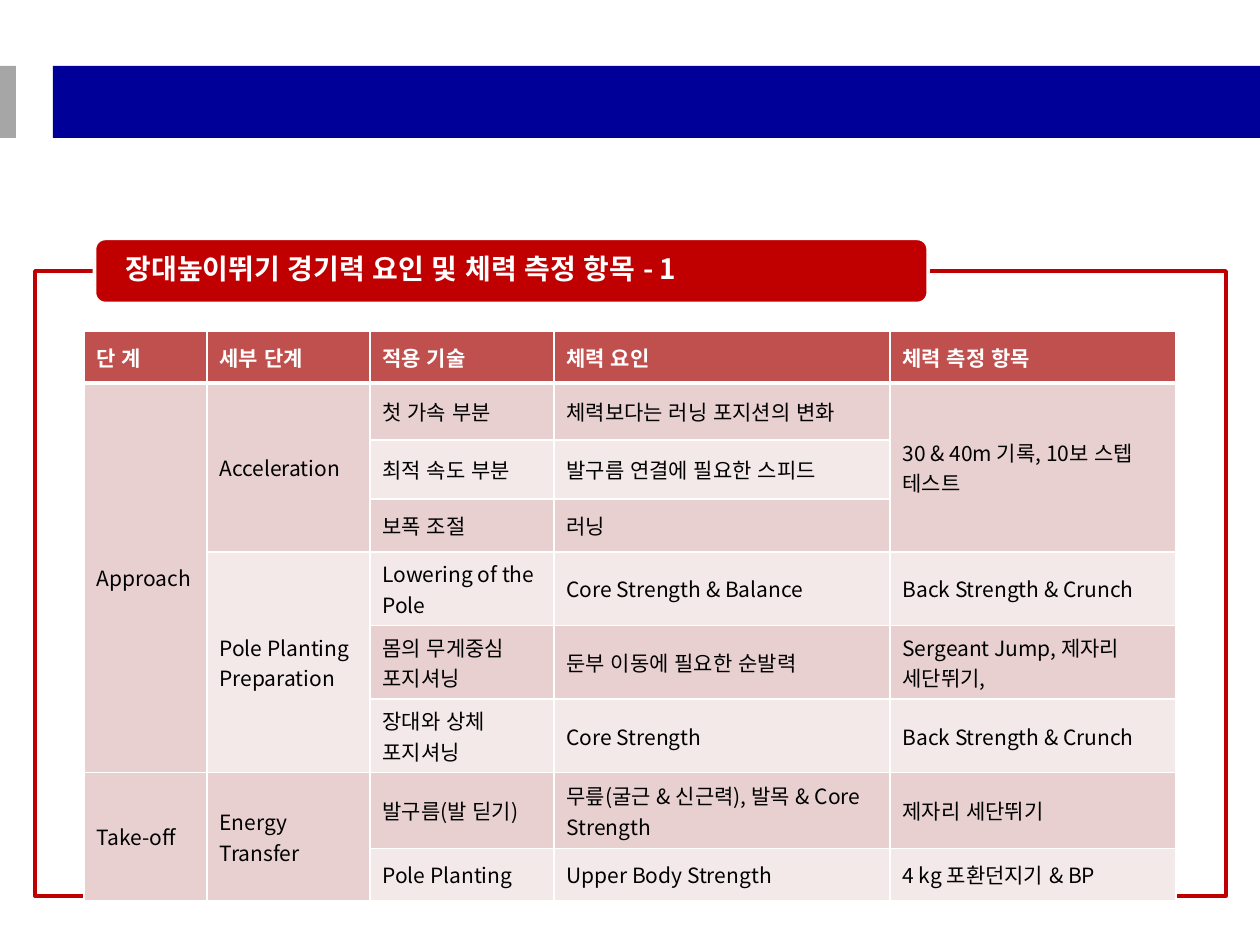
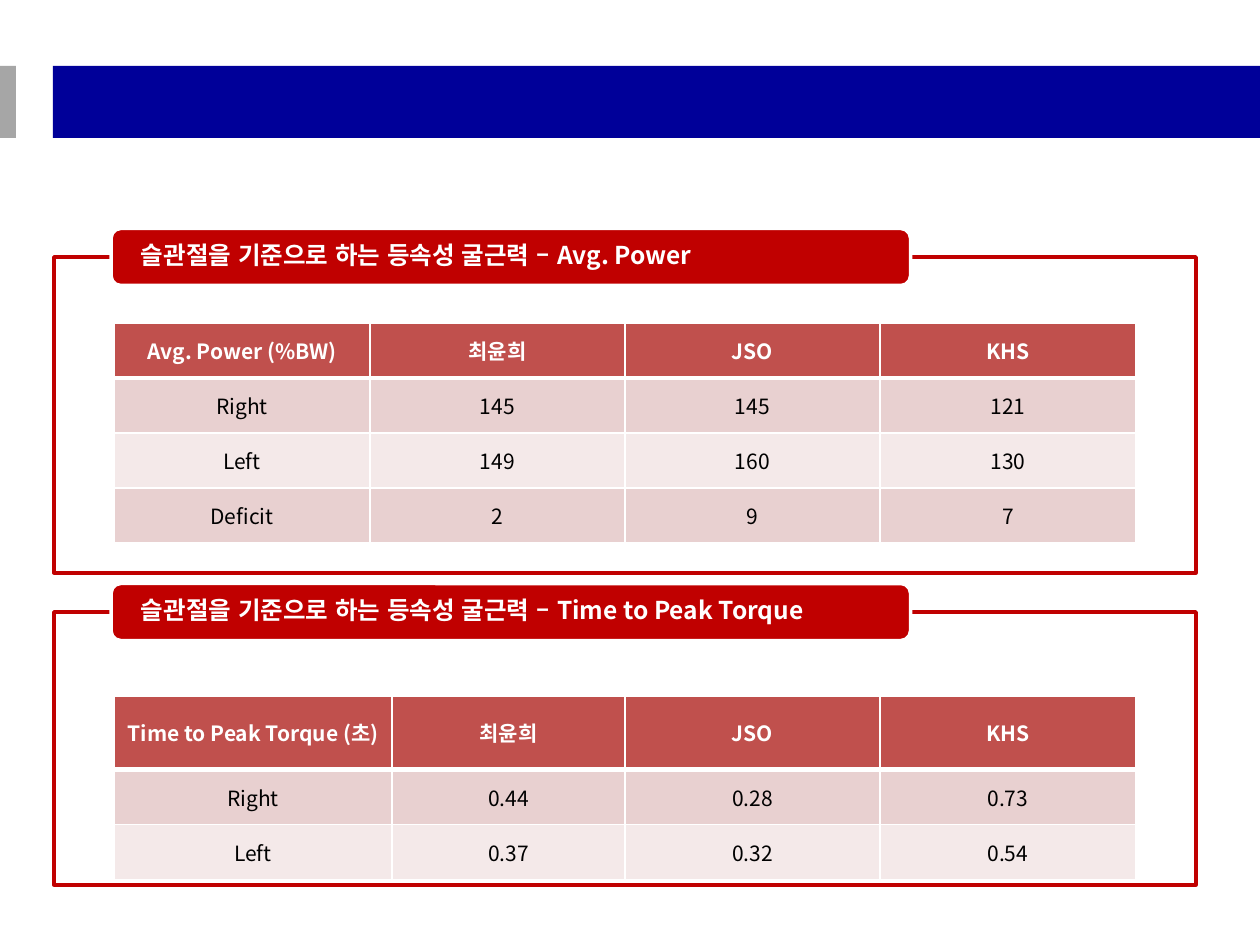
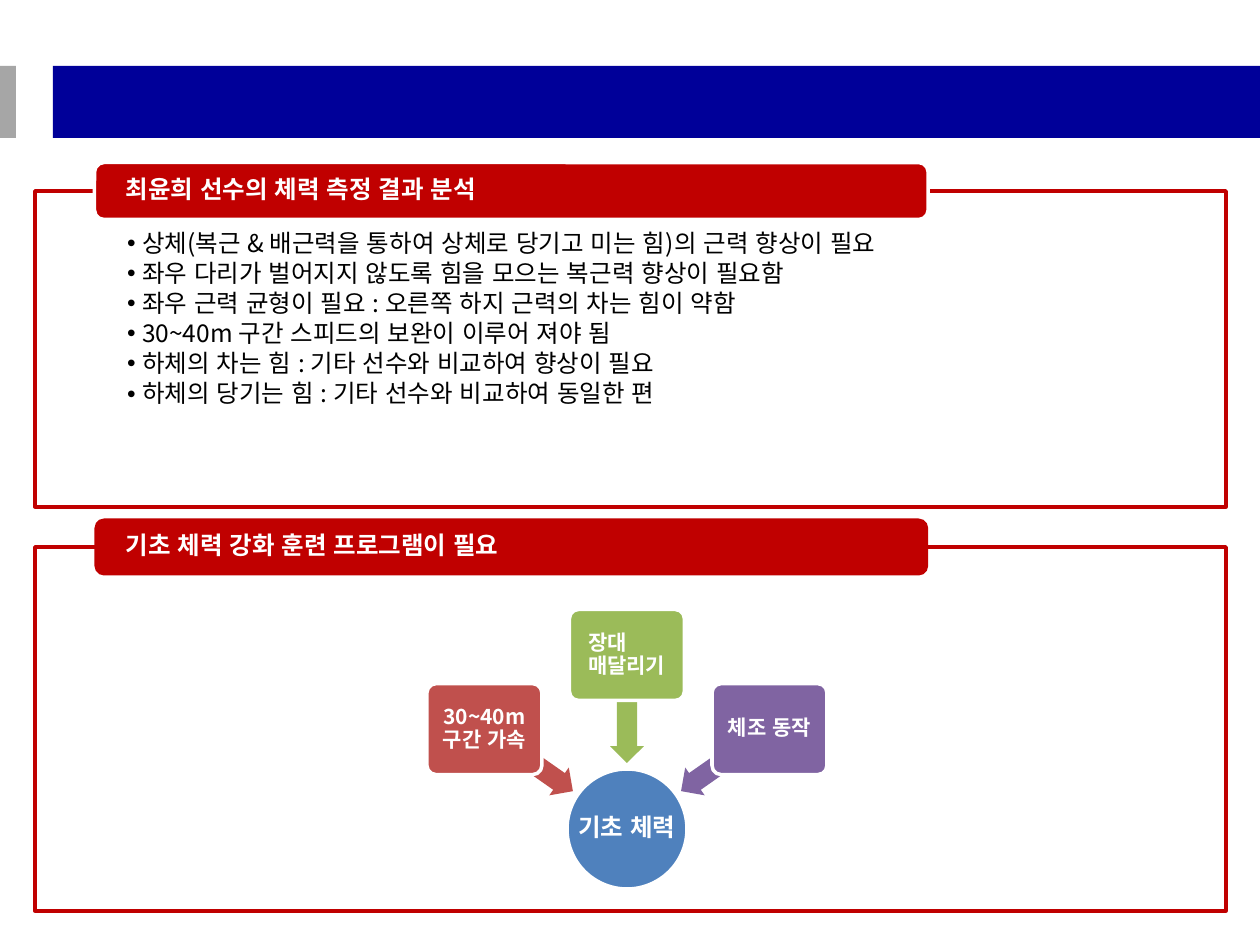
import math

from lxml import etree
from pptx import Presentation, util as u
from pptx.dml.color import RGBColor
from pptx.enum import lang, shapes, text
from pptx.oxml import ns

NAVY = RGBColor(0x00, 0x00, 0x99)
GREY = RGBColor(0xA6, 0xA6, 0xA6)
CRIMSON = RGBColor(0xC0, 0x00, 0x00)
WHITE = RGBColor(0xFF, 0xFF, 0xFF)
BLACK = RGBColor(0x00, 0x00, 0x00)
BRICK = RGBColor(0xC0, 0x50, 0x4D)
ROSE = RGBColor(0xE8, 0xD0, 0xD0)
PALE_ROSE = RGBColor(0xF4, 0xE9, 0xE9)
GREEN = RGBColor(0x9B, 0xBB, 0x59)
PURPLE = RGBColor(0x80, 0x64, 0xA2)
BLUE = RGBColor(0x4F, 0x81, 0xBD)

FONT = "Noto Sans CJK KR"
LEFT, CENTER = text.PP_ALIGN.LEFT, text.PP_ALIGN.CENTER
LINE_SPACING = 0.9
PX = 914400 / 126
SLIDE_W, SLIDE_H = 1260, 945
BANDS = [((53, 66, 1207, 72), NAVY), ((0, 66, 16, 72), GREY)]

# None continues the cell above
FACTORS = [
    ("단 계", "세부 단계", "적용 기술", "체력 요인", "체력 측정 항목"),
    ("Approach", "Acceleration", "첫 가속 부분", "체력보다는 러닝 포지션의 변화",
     "30 & 40m 기록, 10보 스텝 테스트"),
    (None, None, "최적 속도 부분", "발구름 연결에 필요한 스피드", None),
    (None, None, "보폭 조절", "러닝", None),
    (None, "Pole Planting Preparation", "Lowering of the Pole",
     "Core Strength & Balance", "Back Strength & Crunch"),
    (None, None, "몸의 무게중심 포지셔닝", "둔부 이동에 필요한 순발력",
     "Sergeant Jump, 제자리 세단뛰기,"),
    (None, None, "장대와 상체 포지셔닝", "Core Strength", "Back Strength & Crunch"),
    ("Take-off", "Energy Transfer", "발구름(발 딛기)",
     "무릎(굴근 & 신근력), 발목 & Core Strength", "제자리 세단뛰기"),
    (None, None, "Pole Planting", "Upper Body Strength", "4 kg 포환던지기 & BP"),
]
FACTOR_COLS = [123, 163, 184, 336, 286]
FACTOR_ROWS = [52, 57, 59, 53, 67, 69, 59, 76, 52]

POWER = [
    ("Avg. Power (%BW)", "최윤희", "JSO", "KHS"),
    ("Right", "145", "145", "121"),
    ("Left", "149", "160", "130"),
    ("Deficit", "2", "9", "7"),
]
TORQUE = [
    ("Time to Peak Torque (초)", "최윤희", "JSO", "KHS"),
    ("Right", "0.44", "0.28", "0.73"),
    ("Left", "0.37", "0.32", "0.54"),
]
POWER_COLS = [256, 255, 255, 256]
TORQUE_COLS = [278, 233, 255, 256]
RESULT_ROW = 55

FINDINGS = [
    "상체(복근 & 배근력을 통하여 상체로 당기고 미는 힘)의 근력 향상이 필요",
    "좌우 다리가 벌어지지 않도록 힘을 모으는 복근력 향상이 필요함",
    "좌우 근력 균형이 필요 : 오른쪽 하지 근력의 차는 힘이 약함",
    "30~40m 구간 스피드의 보완이 이루어 져야 됨",
    "하체의 차는 힘 : 기타 선수와 비교하여 향상이 필요",
    "하체의 당기는 힘 : 기타 선수와 비교하여 동일한 편",
]
# (lines, colour, direction from the hub in degrees, alignment, left inset)
EXERCISES = [
    (["30~40m 구간 가속"], BRICK, 215, CENTER, 4),
    (["장대", "매달리기"], GREEN, 270, LEFT, 16),
    (["체조 동작"], PURPLE, 325, CENTER, 4),
]
HUB = (627, 829)
HUB_SIZE, NODE_SIZE, ARROW_SIZE = (120, 120), (115, 91), (108, 34)
NODE_RADIUS, ARROW_RADIUS = 174, 120


def px(n):
    return u.Emu(round(n * PX))


def add_shape(slide, kind, box, fill, line=None):
    sp = slide.shapes.add_shape(kind, *map(px, box))
    sp.shadow.inherit = False
    sp.fill.solid()
    sp.fill.fore_color.rgb = fill
    if line is None:
        sp.line.fill.background()
    else:
        sp.line.color.rgb = line
        sp.line.width = u.Pt(2)
    return sp


def set_margins(tf, left, top, right, bottom):
    tf.margin_left, tf.margin_top = px(left), px(top)
    tf.margin_right, tf.margin_bottom = px(right), px(bottom)


def add_run(p, words, size, color, bold=False):
    r = p.add_run()
    r.text = words
    f = r.font
    f.size, f.bold, f.name = u.Pt(size), bold, FONT
    f.language_id = lang.MSO_LANGUAGE_ID.KOREAN
    f.color.rgb = color
    etree.SubElement(r._r.get_or_add_rPr(), ns.qn("a:ea"), typeface=FONT)


def add_title_lines(sp, lines, size, align, wrap=True):
    """Write bold white lines, vertically centred, in a shape."""
    tf = sp.text_frame
    tf.word_wrap = wrap
    tf.vertical_anchor = text.MSO_ANCHOR.MIDDLE
    p = tf.paragraphs[0]
    p.alignment, p.line_spacing = align, LINE_SPACING
    for i, line in enumerate(lines):
        if i:
            p.add_line_break()
        add_run(p, line, size, WHITE, True)


def add_panel(slide, box, title, label_h=57, size=14, label_line=WHITE):
    """Draw a frame with a title label centred on its top edge."""
    x, y, w, _ = box
    frame = add_shape(slide, shapes.MSO_SHAPE.RECTANGLE, box, WHITE, CRIMSON)
    color = frame.fill._xPr.find(".//" + ns.qn("a:srgbClr"))
    etree.SubElement(color, ns.qn("a:alpha"), val="90000")
    label_box = (x + 0.05 * w, y - label_h / 2, 0.7 * w, label_h)
    label = add_shape(slide, shapes.MSO_SHAPE.ROUNDED_RECTANGLE, label_box,
                      CRIMSON, label_line)
    inset = w / 38 - 3
    set_margins(label.text_frame, inset, 0, inset, 0)
    add_title_lines(label, [title], size, LEFT)
    return frame


def add_bullets(frame, items):
    tf = frame.text_frame
    tf.word_wrap = True
    tf.vertical_anchor = text.MSO_ANCHOR.TOP
    set_margins(tf, 92, 40, 92, 14)
    for i, item in enumerate(items):
        p = tf.add_paragraph() if i else tf.paragraphs[0]
        pPr = p._p.get_or_add_pPr()
        pPr.set("marL", str(px(15)))
        pPr.set("indent", str(px(-15)))
        etree.SubElement(pPr, ns.qn("a:buFont"), typeface="Arial")
        etree.SubElement(pPr, ns.qn("a:buChar"), char="•")
        p.alignment, p.line_spacing = LEFT, LINE_SPACING
        p.space_after = u.Pt(2.1)
        add_run(p, item, 14, BLACK)


def set_borders(cell, row):
    """White rules, with a thick one under the header row."""
    tcPr = cell._tc.get_or_add_tcPr()
    thick = {0: "lnB", 1: "lnT"}.get(row)
    for i, side in enumerate(("lnL", "lnR", "lnT", "lnB")):
        width = u.Pt(3 if side == thick else 1)
        ln = etree.Element(ns.qn("a:" + side), w=str(width))
        fill = etree.SubElement(ln, ns.qn("a:solidFill"))
        etree.SubElement(fill, ns.qn("a:srgbClr"), val=str(WHITE))
        tcPr.insert(i, ln)


def add_table(slide, left, top, data, cols, rows, align=LEFT):
    table = slide.shapes.add_table(len(data), len(cols), px(left), px(top),
                                   px(sum(cols)), px(sum(rows))).table
    for column, w in zip(table.columns, cols):
        column.width = px(w)
    for row, h in zip(table.rows, rows):
        row.height = px(h)
    for i, values in enumerate(data):
        for j, value in enumerate(values):
            cell = table.cell(i, j)
            cell.fill.solid()
            cell.fill.fore_color.rgb = BRICK if i == 0 else ROSE if i % 2 else PALE_ROSE
            cell.vertical_anchor = text.MSO_ANCHOR.MIDDLE
            set_borders(cell, i)
            if value is None:
                continue
            p = cell.text_frame.paragraphs[0]
            p.alignment = align
            add_run(p, value, 12, BLACK if i else WHITE, i == 0)
            last = i
            while last + 1 < len(data) and data[last + 1][j] is None:
                last += 1
            if last > i:
                cell.merge(table.cell(last, j))


def around_hub(radius, angle, size):
    """Box of the given size centred at an angle and distance from the hub."""
    a = math.radians(angle)
    w, h = size
    return (HUB[0] + radius * math.cos(a) - w / 2,
            HUB[1] + radius * math.sin(a) - h / 2, w, h)


def add_training_diagram(slide):
    hub = add_shape(slide, shapes.MSO_SHAPE.OVAL, around_hub(0, 0, HUB_SIZE), BLUE, WHITE)
    set_margins(hub.text_frame, 1, 1, 1, 1)
    add_title_lines(hub, ["기초 체력"], 14, CENTER, wrap=False)
    for lines, color, angle, align, inset in EXERCISES:
        arrow = add_shape(slide, shapes.MSO_SHAPE.LEFT_ARROW,
                          around_hub(ARROW_RADIUS, angle, ARROW_SIZE), color)
        arrow.adjustments[0], arrow.adjustments[1] = 0.6, 0.5
        arrow.rotation = angle
        node = add_shape(slide, shapes.MSO_SHAPE.ROUNDED_RECTANGLE,
                         around_hub(NODE_RADIUS, angle, NODE_SIZE), color, WHITE)
        node.adjustments[0] = 0.1
        set_margins(node.text_frame, inset, 4, 4, 4)
        add_title_lines(node, lines, 12, align)


def add_bands(slide, layout):
    """Draw the header bands and move them to the layout all slides share."""
    for box, color in BANDS:
        sp = add_shape(slide, shapes.MSO_SHAPE.RECTANGLE, box, color)
        layout.shapes.element.append(sp.element)


def main():
    prs = Presentation()
    prs.slide_width, prs.slide_height = px(SLIDE_W), px(SLIDE_H)
    blank = prs.slide_layouts[6]
    factors, results, analysis = [prs.slides.add_slide(blank) for _ in range(3)]
    add_bands(factors, blank)

    add_panel(factors, (35, 271, 1191, 625), "장대높이뛰기 경기력 요인 및 체력 측정 항목 - 1",
              label_h=65, size=16)
    add_table(factors, 84, 331, FACTORS, FACTOR_COLS, FACTOR_ROWS)

    subject = "슬관절을 기준으로 하는 등속성 굴근력 – "
    add_panel(results, (54, 257, 1142, 316), subject + "Avg. Power")
    add_panel(results, (54, 612, 1142, 273), subject + "Time to Peak Torque")
    for top, data, cols in ((323, POWER, POWER_COLS), (696, TORQUE, TORQUE_COLS)):
        add_table(results, 114, top, data, cols, [RESULT_ROW] * len(data), CENTER)

    frame = add_panel(analysis, (35, 191, 1191, 316), "최윤희 선수의 체력 측정 결과 분석")
    add_bullets(frame, FINDINGS)
    add_panel(analysis, (35, 547, 1191, 364), "기초 체력 강화 훈련 프로그램이 필요",
              label_line=None)
    add_training_diagram(analysis)
    prs.save("out.pptx")


if __name__ == "__main__":
    main()
